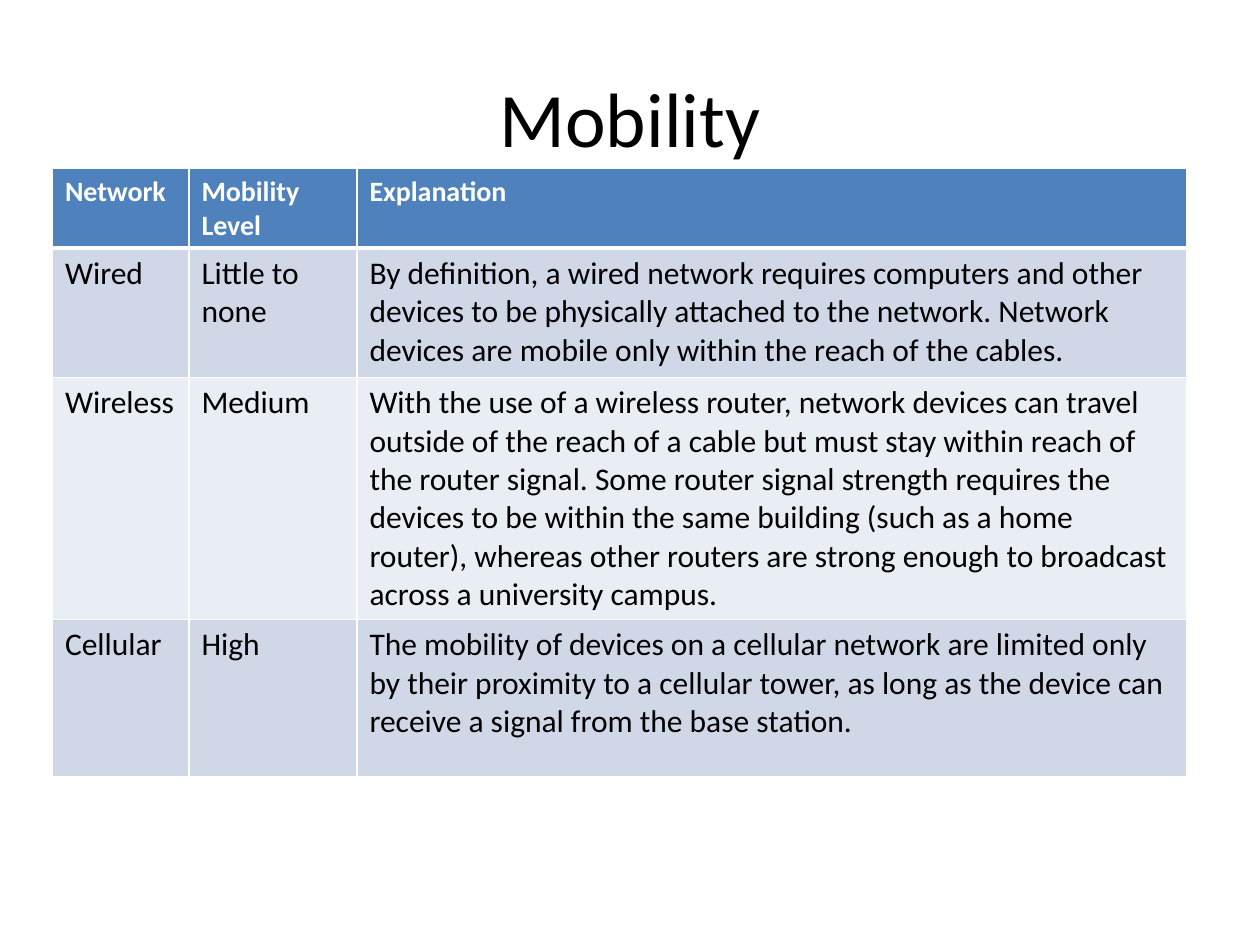
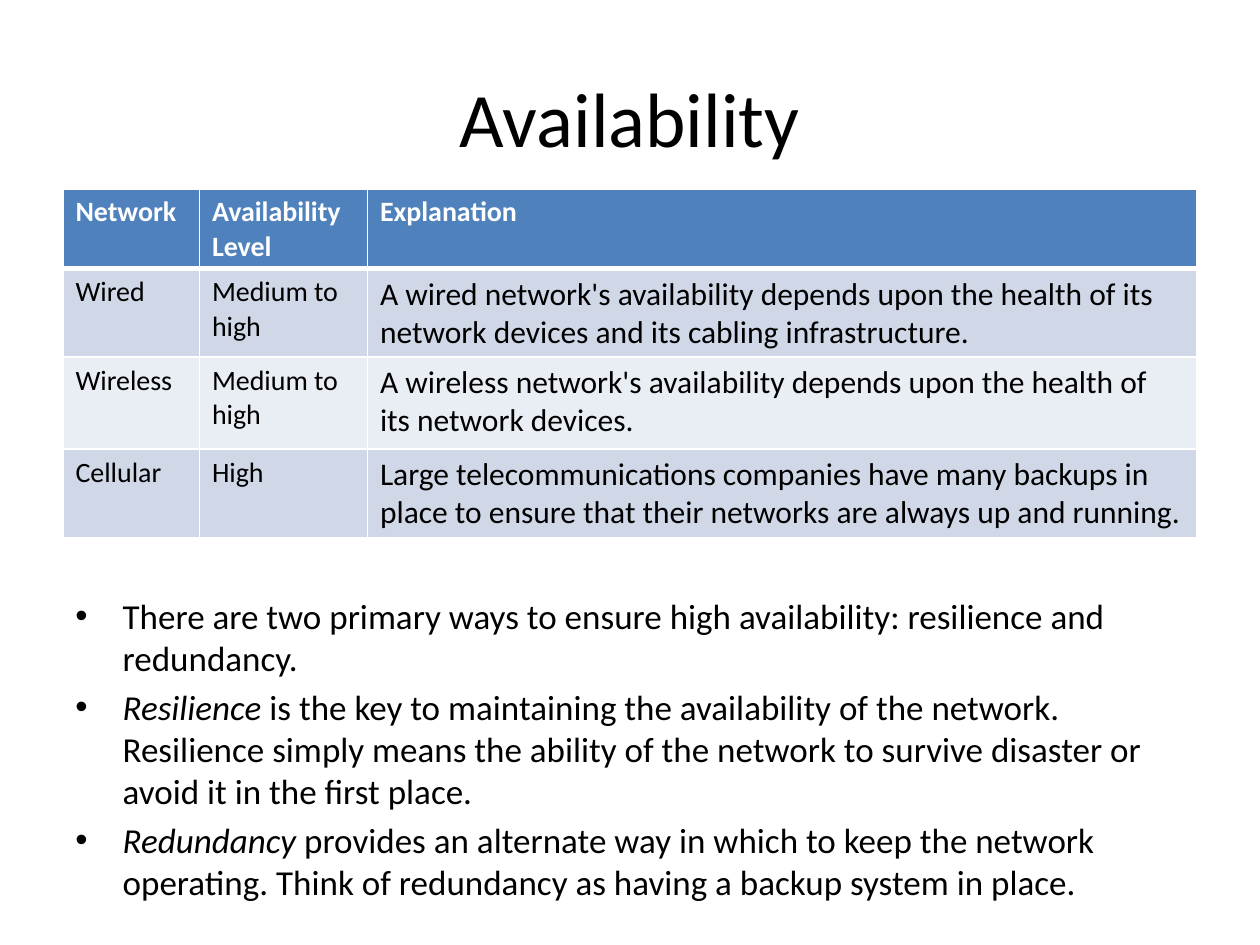
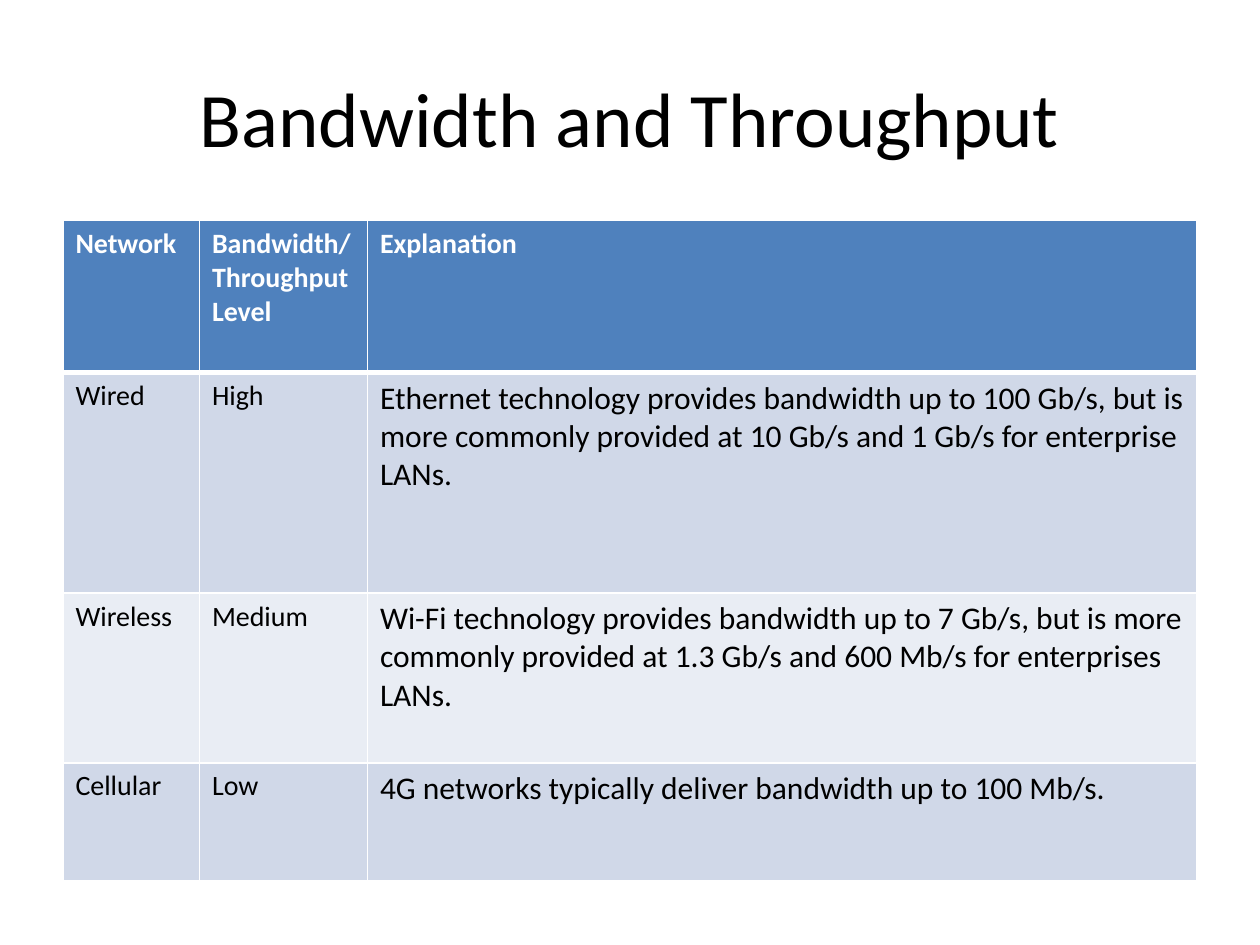
from lxml import etree
from pptx import Presentation
from pptx.dml.color import RGBColor
from pptx.enum import text
from pptx.oxml.ns import qn
from pptx.util import Pt

FONT = "Calibri"
BLACK = RGBColor(0x00, 0x00, 0x00)
WHITE = RGBColor(0xFF, 0xFF, 0xFF)
HEADER_BLUE = RGBColor(0x4F, 0x81, 0xBD)
BANDS = (RGBColor(0xD0, 0xD8, 0xE8), RGBColor(0xE9, 0xED, 0xF4))

SLIDE_SIZE = (720, 540)
TITLE_BOX = (36, 21.6, 648, 90)
BULLETS_BOX = (36, 336, 648, 174)
COLUMN_WIDTHS = (78, 96, 474)
HEADER_SIZE = 16
EXPLANATION_SIZE = 18
BULLET_SIZE = 20
BULLET_INDENT = 27

# Each table row is (network, level, explanation paragraphs).
# Each bullet is (italic lead, rest).
SLIDES = [
    {
        "title": "Mobility",
        "level": "Mobility Level",
        "corner": (30, 96),
        "row_heights": (45.5, 74, 138.5, 90),
        "label_size": 18,
        "rows": [
            ("Wired", "Little to none", [
                "By definition, a wired network requires computers and other",
                "devices to be physically attached to the network. Network",
                "devices are mobile only within the reach of the cables."]),
            ("Wireless", "Medium", [
                "With the use of a wireless router, network devices can travel",
                "outside of the reach of a cable but must stay within reach of "
                "the router signal. Some router signal strength requires the "
                "devices to be within the same building (such as a home "
                "router), whereas other routers are strong enough to broadcast "
                "across a university campus."]),
            ("Cellular", "High", [
                "The mobility of devices on a cellular network are limited only "
                "by their proximity to a cellular tower, as long as the device can",
                "receive a signal from the base station."]),
        ],
        "bullets": [],
    },
    {
        "title": "Availability",
        "level": "Availability Level",
        "corner": (36, 108),
        "row_heights": (45.5, 50.5, 52.5, 50.5),
        "label_size": 16,
        "rows": [
            ("Wired", "Medium to high", [
                "A wired network's availability depends upon the health of its",
                "network devices and its cabling infrastructure."]),
            ("Wireless", "Medium to high", [
                "A wireless network's availability depends upon the health of "
                "its network devices."]),
            ("Cellular", "High", [
                "Large telecommunications companies have many backups in",
                "place to ensure that their networks are always up and running."]),
        ],
        "bullets": [
            ("", "There are two primary ways to ensure high availability: "
                 "resilience and redundancy."),
            ("Resilience ", "is the key to maintaining the availability of the "
                            "network. Resilience simply means the ability of the "
                            "network to survive disaster or avoid it in the first "
                            "place."),
            ("Redundancy ", "provides an alternate way in which to keep the "
                            "network operating. Think of redundancy as having a "
                            "backup system in place."),
        ],
    },
    {
        "title": "Bandwidth and Throughput",
        "level": "Bandwidth/ Throughput Level",
        "corner": (36, 126),
        "row_heights": (87, 126, 97, 67.5),
        "label_size": 16,
        "rows": [
            ("Wired", "High", [
                "Ethernet technology provides bandwidth up to 100 Gb/s, but is "
                "more commonly provided at 10 Gb/s and 1 Gb/s for enterprise "
                "LANs."]),
            ("Wireless", "Medium", [
                "Wi-Fi technology provides bandwidth up to 7 Gb/s, but is more "
                "commonly provided at 1.3 Gb/s and 600 Mb/s for enterprises "
                "LANs."]),
            ("Cellular", "Low", [
                "4G networks typically deliver bandwidth up to 100 Mb/s."]),
        ],
        "bullets": [],
    },
]


def add_run(paragraph, words, size, color=BLACK, bold=False, italic=False):
    run = paragraph.add_run()
    run.text = words
    font = run.font
    font.name, font.size = FONT, Pt(size)
    font.bold, font.italic = bold, italic
    font.color.rgb = color


def paragraphs_for(frame, items):
    """Yield each item with its own paragraph of the frame."""
    for index, item in enumerate(items):
        yield (frame.add_paragraph() if index else frame.paragraphs[0]), item


def add_text_frame(slide, box):
    frame = slide.shapes.add_textbox(*map(Pt, box)).text_frame
    frame.word_wrap = True
    return frame


def add_title(slide, title):
    frame = add_text_frame(slide, TITLE_BOX)
    frame.vertical_anchor = text.MSO_ANCHOR.MIDDLE
    heading = frame.paragraphs[0]
    heading.alignment = text.PP_ALIGN.CENTER
    add_run(heading, title, 44)


def add_bullets(slide, bullets):
    frame = add_text_frame(slide, BULLETS_BOX)
    for paragraph, (lead, rest) in paragraphs_for(frame, bullets):
        paragraph.space_before = Pt(BULLET_SIZE * 0.2)
        properties = paragraph._p.get_or_add_pPr()
        properties.set("marL", str(Pt(BULLET_INDENT)))
        properties.set("indent", str(-Pt(BULLET_INDENT)))
        etree.SubElement(properties, qn("a:buFont"), typeface="Arial")
        etree.SubElement(properties, qn("a:buChar"), char="•")
        if lead:
            add_run(paragraph, lead, BULLET_SIZE, italic=True)
        add_run(paragraph, rest, BULLET_SIZE)


def set_borders(cell, top, bottom):
    """Draw white borders; they must be set before the cell's fill."""
    properties = cell._tc.get_or_add_tcPr()
    for side, width in (("L", 1), ("R", 1), ("T", top), ("B", bottom)):
        line = etree.SubElement(properties, qn(f"a:ln{side}"), w=str(Pt(width)))
        fill = etree.SubElement(line, qn("a:solidFill"))
        etree.SubElement(fill, qn("a:srgbClr"), val=str(WHITE))


def add_comparison(slide, content):
    heights = content["row_heights"]
    header = ("Network", content["level"], ["Explanation"])
    rows = [header] + content["rows"]
    size = (sum(COLUMN_WIDTHS), sum(heights))
    table = slide.shapes.add_table(
        len(rows), len(COLUMN_WIDTHS), *map(Pt, content["corner"] + size)).table
    for column, width in zip(table.columns, COLUMN_WIDTHS):
        column.width = Pt(width)
    label_size = content["label_size"]
    body_sizes = (label_size, label_size, EXPLANATION_SIZE)

    for r, (network, level, explanation) in enumerate(rows):
        table.rows[r].height = Pt(heights[r])
        is_header = r == 0
        cells = ([network], [level], explanation)
        for c, lines in enumerate(cells):
            cell = table.cell(r, c)
            set_borders(cell, 3 if r == 1 else 1, 3 if is_header else 1)
            cell.fill.solid()
            cell.fill.fore_color.rgb = HEADER_BLUE if is_header else BANDS[(r - 1) % 2]
            for paragraph, line in paragraphs_for(cell.text_frame, lines):
                add_run(paragraph, line,
                        HEADER_SIZE if is_header else body_sizes[c],
                        WHITE if is_header else BLACK, bold=is_header)


def main():
    deck = Presentation()
    deck.slide_width, deck.slide_height = map(Pt, SLIDE_SIZE)
    for content in SLIDES:
        slide = deck.slides.add_slide(deck.slide_layouts[6])
        add_title(slide, content["title"])
        if content["bullets"]:
            add_bullets(slide, content["bullets"])
        add_comparison(slide, content)
    deck.save("out.pptx")


if __name__ == "__main__":
    main()
